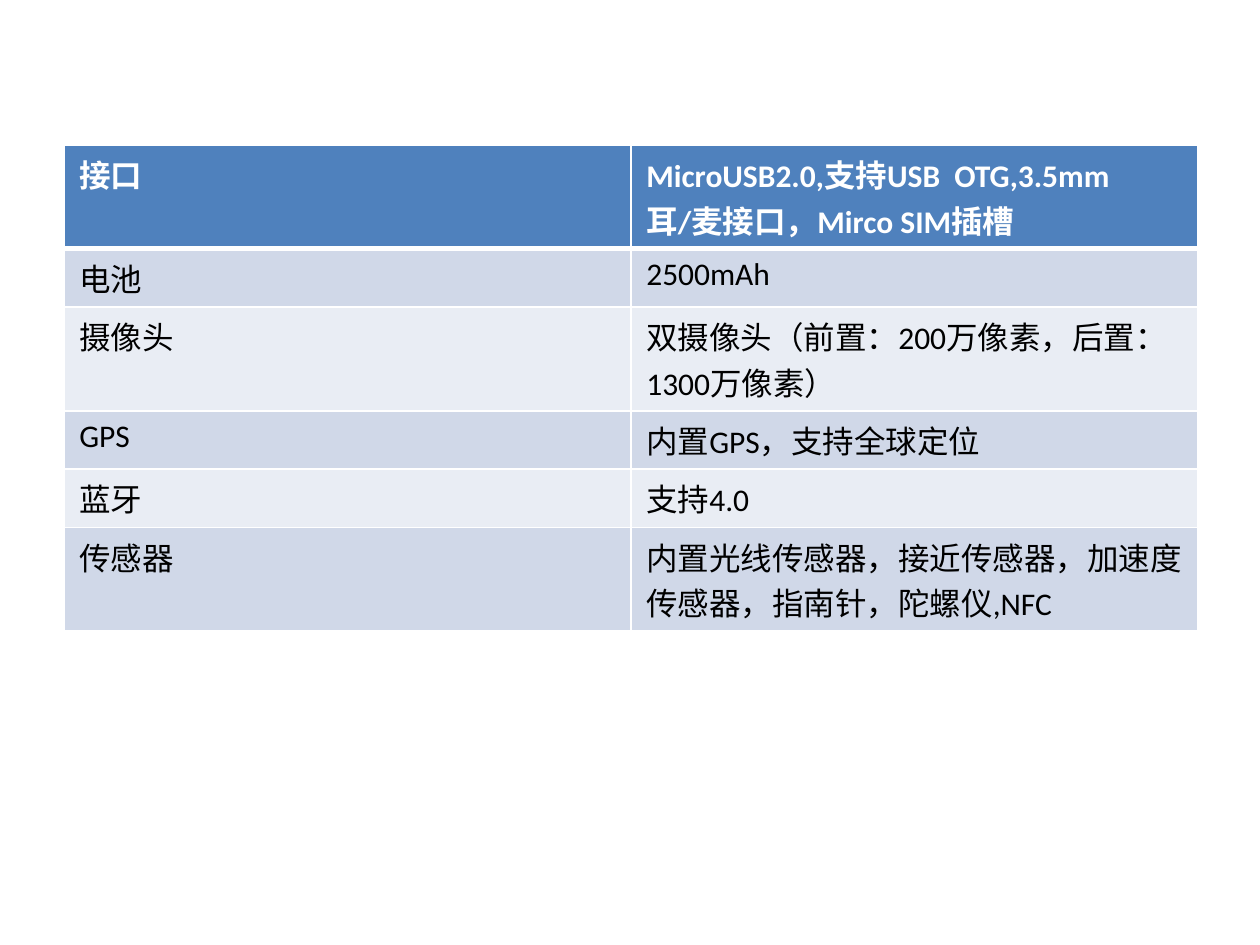
from lxml.etree import SubElement
from pptx import Presentation
from pptx.dml.color import RGBColor
from pptx.oxml.ns import qn
from pptx.util import Inches, Pt

HEADER_FILL = "4F81BD"
BAND_FILLS = ["E9EDF4", "D0D8E8"]
BORDER = "FFFFFF"
ROWS = [
    ("接口", "MicroUSB2.0,支持USB  OTG,3.5mm耳/麦接口，Mirco SIM插槽"),
    ("电池", "2500mAh"),
    ("摄像头", "双摄像头（前置：200万像素，后置：1300万像素）"),
    ("GPS", "内置GPS，支持全球定位"),
    ("蓝牙", "支持4.0"),
    ("传感器", "内置光线传感器，接近传感器，加速度传感器，指南针，陀螺仪,NFC"),
]


def write_text(cell, text, size=18, color="000000", bold=False):
    span = cell.text_frame.paragraphs[0].add_run()
    span.text = text
    span.font.name = "Calibri"
    span.font.size = Pt(size)
    span.font.bold = bold
    span.font.color.rgb = RGBColor.from_string(color)


def add_borders(cell, bottom):
    """Draw all four cell edges; call before filling, as the schema wants lines first."""
    properties = cell._tc.get_or_add_tcPr()
    for edge, width in (("lnL", 1), ("lnR", 1), ("lnT", 1), ("lnB", bottom)):
        line = SubElement(properties, qn(f"a:{edge}"), w=str(Pt(width)))
        fill = SubElement(line, qn("a:solidFill"))
        SubElement(fill, qn("a:srgbClr"), val=BORDER)


deck = Presentation()
deck.slide_width = Inches(10)
deck.slide_height = Inches(7.5)
page = deck.slides.add_slide(deck.slide_layouts[6])

row_height = Inches(0.41)
table = page.shapes.add_table(
    len(ROWS), 2, Inches(0.51), Inches(1.15), Inches(9), row_height * len(ROWS)
).table

for row_index, texts in enumerate(ROWS):
    header = row_index == 0
    table.rows[row_index].height = row_height
    for column_index, text in enumerate(texts):
        cell = table.cell(row_index, column_index)
        cell.margin_left = cell.margin_right = Inches(0.12)
        cell.margin_top = cell.margin_bottom = Inches(0.05)
        add_borders(cell, bottom=3 if header else 1)
        cell.fill.solid()
        fill_color = HEADER_FILL if header else BAND_FILLS[row_index % 2]
        cell.fill.fore_color.rgb = RGBColor.from_string(fill_color)
        write_text(cell, text, color="FFFFFF" if header else "000000", bold=header)

deck.save("out.pptx")
